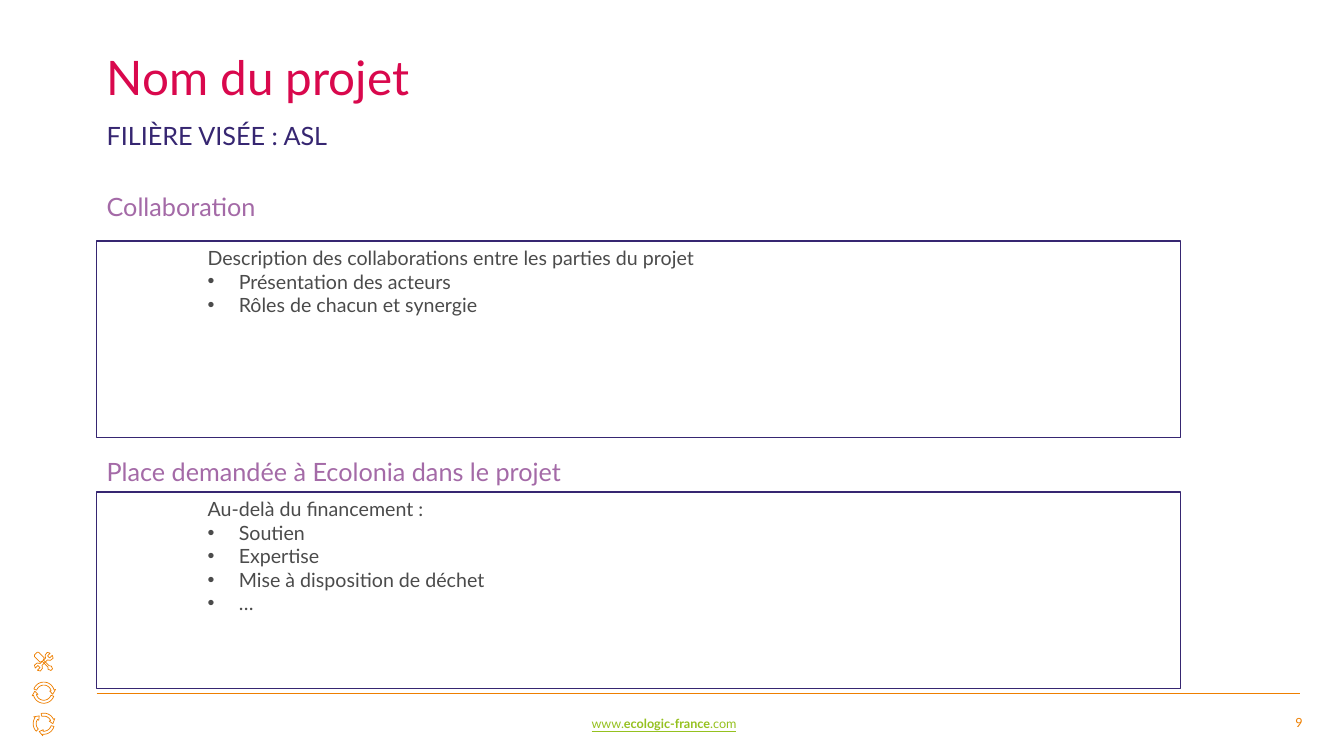
from math import cos, radians, sin

from lxml.etree import SubElement
from pptx import Presentation
from pptx.dml.color import RGBColor
from pptx.enum.shapes import MSO_CONNECTOR, MSO_SHAPE
from pptx.enum.text import MSO_ANCHOR, PP_ALIGN
from pptx.oxml.ns import qn
from pptx.util import Inches, Pt

COLORS = {
    "title": "D9084D", "navy": "362671", "mauve": "A46AA7", "body": "4B4B4B",
    "orange": "EE7F00", "green": "95C11F", "white": "FFFFFF",
}
LEFT, TEXT_WIDTH, BOX_WIDTH, BOX_HEIGHT = 7.2, 85.67, 80.65, 26
ICON_X, ICON_Y, ICON_STEP = 3.26, 87.53, 4.1
WRENCH = [(-0.9, 0.2), (-1.4, 0.2), (-1.2, 0.55), (-0.75, 0.5), (-0.5, 0.17),
          (0.5, 0.17), (0.75, 0.5), (1.2, 0.55), (1.4, 0.2), (0.9, 0.2)]
SCREWDRIVER = [(-1.5, 0.25), (-1.35, 0.4), (-0.3, 0.4), (-0.2, 0.12),
               (0.9, 0.12), (1.1, 0.3), (1.5, 0.15)]


def color(name):
    return RGBColor.from_string(COLORS[name])


class ProjectSlide:
    """Draws styled elements on a grid of 100 columns by 100 rows."""

    def __init__(self, presentation, font="Lato"):
        self.font = font
        self.column = presentation.slide_width / 100
        self.row = presentation.slide_height / 100
        self.slide = presentation.slides.add_slide(presentation.slide_layouts[5])
        self.shapes = self.slide.shapes

    def place(self, x, y, width, height):
        return (round(x * self.column), round(y * self.row),
                round(width * self.column), round(height * self.row))

    def format_text(self, paragraph, size, color_name, align=PP_ALIGN.LEFT):
        paragraph.alignment = align
        for run in paragraph.runs:
            run.font.name = self.font
            run.font.size = Pt(size)
            run.font.color.rgb = color(color_name)

    def title(self, text, x, y, width, height):
        shape = self.shapes.title
        shape.left, shape.top, shape.width, shape.height = self.place(x, y, width, height)
        frame = shape.text_frame
        frame.text = text
        frame.vertical_anchor = MSO_ANCHOR.TOP
        frame.paragraphs[0].line_spacing = 0.9
        self.format_text(frame.paragraphs[0], 34, "title")

    def label(self, text, x, y, width, height, size, color_name, align=PP_ALIGN.LEFT):
        frame = self.shapes.add_textbox(*self.place(x, y, width, height)).text_frame
        frame.word_wrap = True
        frame.text = text
        self.format_text(frame.paragraphs[0], size, color_name, align)

    def web_address(self, parts, x, y, width, height):
        frame = self.shapes.add_textbox(*self.place(x, y, width, height)).text_frame
        frame.word_wrap = True
        paragraph = frame.paragraphs[0]
        for text, bold in parts:
            run = paragraph.add_run()
            run.text = text
            run.font.bold = bold
            run.font.underline = True
        self.format_text(paragraph, 9, "green")

    def box(self, lines, x, y, width, height):
        shape = self.shapes.add_shape(MSO_SHAPE.RECTANGLE, *self.place(x, y, width, height))
        shape.shadow.inherit = False
        shape.fill.solid()
        shape.fill.fore_color.rgb = color("white")
        shape.line.color.rgb = color("navy")
        shape.line.width = Pt(1)
        frame = shape.text_frame
        frame.word_wrap = True
        frame.vertical_anchor = MSO_ANCHOR.TOP
        frame.text = "\n".join(lines)
        for index, paragraph in enumerate(frame.paragraphs):
            properties = paragraph._p.get_or_add_pPr()
            properties.set("marL", str(Inches(1.31 if index else 1)))
            properties.set("indent", str(Inches(-0.31 if index else 0)))
            if index:
                SubElement(properties, qn("a:buFont")).set("typeface", "Arial")
                SubElement(properties, qn("a:buChar")).set("char", "•")
            self.format_text(paragraph, 14, "body")

    def rule(self, x, y, end_x):
        left, top, right, bottom = self.place(x, y, end_x, y)
        line = self.shapes.add_connector(MSO_CONNECTOR.STRAIGHT, left, top, right, bottom)
        line.line.color.rgb = color("orange")
        line.line.width = Pt(0.75)
        SubElement(line._element.spPr, qn("a:effectLst"))

    def outline(self, points, x, y):
        corners = [(round(x * self.column + dx * self.row), round((y + dy) * self.row))
                   for dx, dy in points]
        builder = self.shapes.build_freeform(*corners[0])
        builder.add_line_segments(corners[1:], close=True)
        shape = builder.convert_to_shape()
        shape.shadow.inherit = False
        shape.fill.background()
        shape.line.color.rgb = color("orange")
        shape.line.width = Pt(0.5)

    def tool(self, profile, angle, x, y):
        points = profile + [(px, -py) for px, py in reversed(profile)]
        cosine, sine = cos(radians(angle)), sin(radians(angle))
        self.outline([(px * cosine - py * sine, px * sine + py * cosine)
                      for px, py in points], x, y)

    def arrow_cycle(self, tips, span, x, y):
        for tip in tips:
            angles = range(tip - span, tip - 24, 5)
            polar = [(1.4, angle) for angle in angles]
            polar += [(1.6, tip - 25), (1.2, tip), (0.8, tip - 25)]
            polar += [(1, angle) for angle in reversed(angles)]
            self.outline([(radius * cos(radians(angle)), radius * sin(radians(angle)))
                          for radius, angle in polar], x, y)


def main():
    presentation = Presentation()
    presentation.slide_width, presentation.slide_height = Inches(13.33), Inches(7.5)
    page = ProjectSlide(presentation)

    page.web_address([("www.", False), ("ecologic-france", True), (".com", False)],
                     43.28, 94, 39.3, 3.33)
    page.rule(LEFT, 91.73, 96.7)
    page.label("9", 92.87, 93.87, 4.8, 3.47, 9, "orange", PP_ALIGN.RIGHT)

    page.tool(WRENCH, -45, ICON_X, ICON_Y)
    page.tool(SCREWDRIVER, 45, ICON_X, ICON_Y)
    page.arrow_cycle((10, 190), 170, ICON_X, ICON_Y + ICON_STEP)
    page.arrow_cycle((-120, 0, 120), 105, ICON_X, ICON_Y + 2 * ICON_STEP)

    page.title("Nom du projet", LEFT, 6.5, TEXT_WIDTH, 8.27)
    for text, y, color_name in (
        ("FILIÈRE VISÉE : ASL", 15.2, "navy"),
        ("Collaboration", 24.67, "mauve"),
        ("Place demandée à Ecolonia dans le projet", 59.73, "mauve"),
    ):
        page.label(text, LEFT, y, TEXT_WIDTH, 5.33, 18, color_name)

    for lines, y in (
        (["Description des collaborations entre les parties du projet",
          "Présentation des acteurs", "Rôles de chacun et synergie"], 31.87),
        (["Au-delà du financement :", "Soutien", "Expertise",
          "Mise à disposition de déchet", "…"], 65.07),
    ):
        page.box(lines, LEFT, y, BOX_WIDTH, BOX_HEIGHT)
    presentation.save("out.pptx")


if __name__ == "__main__":
    main()
